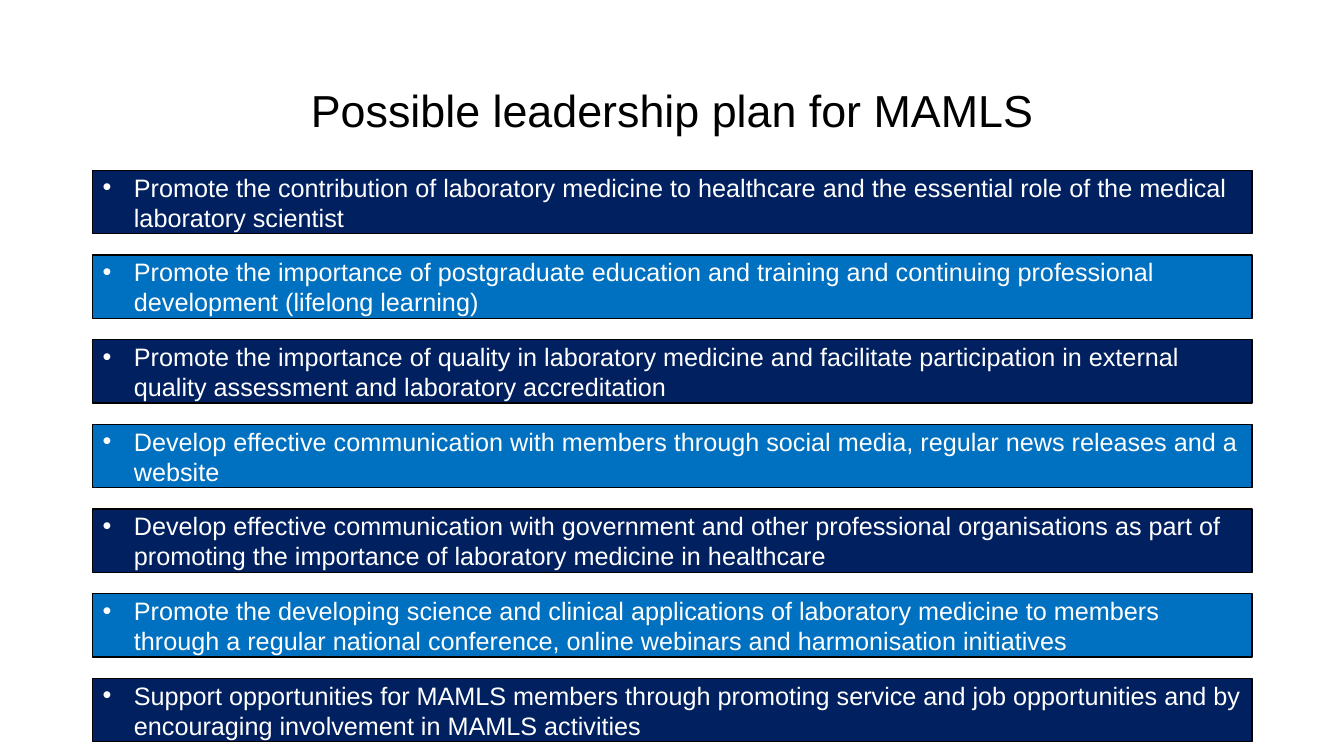
from lxml import etree
from pptx import Presentation, util as u
from pptx.dml.color import RGBColor
from pptx.enum import shapes, text
from pptx.oxml import ns

NAVY = RGBColor(0x00, 0x20, 0x60)
BLUE = RGBColor(0x00, 0x70, 0xC0)
BLACK = RGBColor(0x00, 0x00, 0x00)
WHITE = RGBColor(0xFF, 0xFF, 0xFF)
FONT = "Arial"

LEFT, WIDTH = u.Inches(0.92), u.Inches(11.5)
TOP, PITCH, HEIGHT = u.Inches(1.69), u.Inches(0.84), u.Inches(0.63)
INDENT = u.Inches(0.31)

PLANS = [
    "Promote the contribution of laboratory medicine to healthcare and the essential role of the medical laboratory scientist",
    "Promote the importance of postgraduate education and training and continuing professional development (lifelong learning)",
    "Promote the importance of quality in laboratory medicine and facilitate participation in external quality assessment and laboratory accreditation",
    "Develop effective communication with members through social media, regular news releases and a website",
    "Develop effective communication with government and other professional organisations as part of promoting the importance of laboratory medicine in healthcare",
    "Promote the developing science and clinical applications of laboratory medicine to members through a regular national conference, online webinars and harmonisation initiatives",
    "Support opportunities for MAMLS members through promoting service and job opportunities and by encouraging involvement in MAMLS activities",
]


def style_run(p, size, color):
    font = p.runs[0].font
    font.name, font.size, font.color.rgb = FONT, u.Pt(size), color


prs = Presentation()
prs.slide_width, prs.slide_height = u.Inches(13.33), u.Inches(7.5)
s = prs.slides.add_slide(prs.slide_layouts[5])

title = s.shapes.title
title.left, title.top = LEFT, u.Inches(0.4)
title.width, title.height = WIDTH, u.Inches(1.45)
tf = title.text_frame
tf.text = "Possible leadership plan for MAMLS"
tf.vertical_anchor = text.MSO_ANCHOR.MIDDLE
p = tf.paragraphs[0]
p.alignment, p.line_spacing = text.PP_ALIGN.CENTER, 0.9
style_run(p, 32, BLACK)

for i, plan in enumerate(PLANS):
    sp = s.shapes.add_shape(shapes.MSO_SHAPE.RECTANGLE, LEFT, TOP + i * PITCH, WIDTH, HEIGHT)
    sp.shadow.inherit = False
    sp.fill.solid()
    sp.fill.fore_color.rgb = (NAVY, BLUE)[i % 2]
    sp.line.color.rgb, sp.line.width = BLACK, u.Pt(1)
    tf = sp.text_frame
    tf.word_wrap = True
    tf.vertical_anchor = text.MSO_ANCHOR.MIDDLE
    tf.text = plan
    p = tf.paragraphs[0]
    p.alignment = text.PP_ALIGN.LEFT
    style_run(p, 18, WHITE)
    pPr = p._p.get_or_add_pPr()
    pPr.set("marL", str(INDENT))
    pPr.set("indent", str(-INDENT))
    etree.SubElement(pPr, ns.qn("a:buFont")).set("typeface", FONT)
    etree.SubElement(pPr, ns.qn("a:buChar")).set("char", "•")

prs.save("out.pptx")
